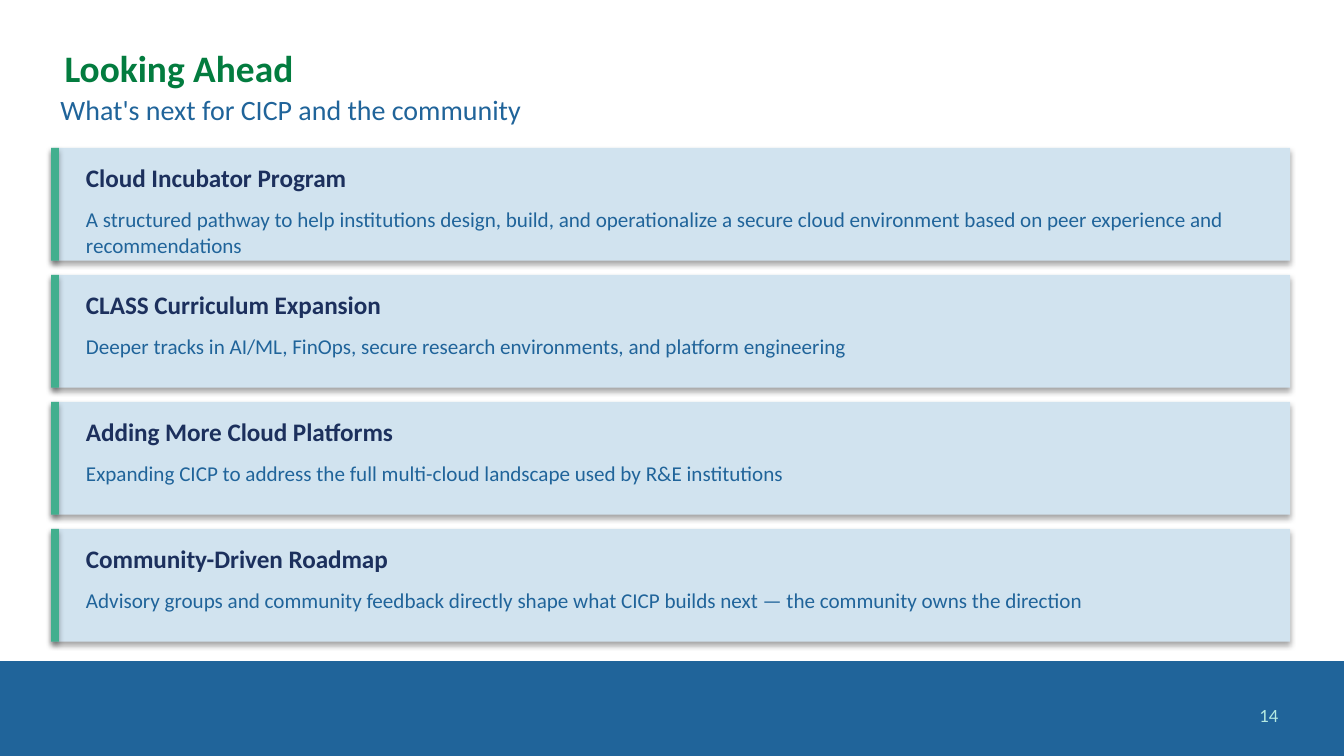
from pptx import Presentation
from pptx.dml.color import RGBColor
from pptx.enum.shapes import MSO_SHAPE
from pptx.enum.text import MSO_ANCHOR, MSO_AUTO_SIZE, PP_ALIGN
from pptx.oxml import parse_xml
from pptx.oxml.ns import nsdecls, qn
from pptx.util import Inches, Pt

RECT = MSO_SHAPE.RECTANGLE
TOP, MIDDLE = MSO_ANCHOR.TOP, MSO_ANCHOR.MIDDLE
LEFT, RIGHT = PP_ALIGN.LEFT, PP_ALIGN.RIGHT
FIXED = MSO_AUTO_SIZE.NONE

BLUE = RGBColor(0x20, 0x64, 0x9A)
GREEN = RGBColor(0x03, 0x7C, 0x3F)
MINT = RGBColor(0x42, 0xAF, 0x8E)
AQUA = RGBColor(0xB4, 0xE9, 0xE2)
PALE = RGBColor(0xD1, 0xE3, 0xEF)
NAVY = RGBColor(0x1C, 0x30, 0x5D)

SHADOW = (
    f'<a:outerShdw {nsdecls("a")} blurRad="{Pt(3.1)}" dist="{Pt(1.8)}" '
    'dir="5400000" algn="bl" rotWithShape="0">'
    '<a:srgbClr val="000000"><a:alpha val="35000"/></a:srgbClr></a:outerShdw>'
)

PLANS = [
    ("Cloud Incubator Program",
     "A structured pathway to help institutions design, build, and operationalize "
     "a secure cloud environment based on peer experience and recommendations"),
    ("CLASS Curriculum Expansion",
     "Deeper tracks in AI/ML, FinOps, secure research environments, "
     "and platform engineering"),
    ("Adding More Cloud Platforms",
     "Expanding CICP to address the full multi-cloud landscape "
     "used by R&E institutions"),
    ("Community-Driven Roadmap",
     "Advisory groups and community feedback directly shape what CICP builds next "
     "— the community owns the direction"),
]
WIDE = 10
TALL = WIDE * 9 / 16
EDGE, WIDTH = 0.38, 9.22
FIRST, HIGH = 1.1, 0.84
STEP = HIGH * 9 / 8


def write(frame, text, size=11.25, color=BLUE, bold=False, align=LEFT,
          anchor=TOP, inset=(0.07, 0.04), space=None):
    """Fill a text frame with one formatted paragraph."""
    frame.word_wrap = True
    frame.auto_size = FIXED
    frame.vertical_anchor = anchor
    frame.margin_left = frame.margin_right = Inches(inset[0])
    frame.margin_top = frame.margin_bottom = Inches(inset[1])
    para = frame.paragraphs[0]
    para.alignment = align
    para.line_spacing = space
    run = para.add_run()
    run.text = text
    font = run.font
    font.name, font.size, font.bold = "Calibri", Pt(size), bold
    font.color.rgb = color


class Deck:
    def __init__(self):
        self.show = Presentation()
        self.show.slide_width = Inches(WIDE)
        self.show.slide_height = Inches(TALL)
        self.slide = self.show.slides.add_slide(self.show.slide_layouts[5])

    def title(self, text, x, y, w, h, **style):
        box = self.slide.shapes.title
        box.left, box.top = Inches(x), Inches(y)
        box.width, box.height = Inches(w), Inches(h)
        write(box.text_frame, text, **style)

    def text(self, text, x, y, w, h, **style):
        box = self.slide.shapes.add_textbox(
            Inches(x), Inches(y), Inches(w), Inches(h))
        write(box.text_frame, text, **style)

    def rect(self, x, y, w, h, color, raised=False):
        box = self.slide.shapes.add_shape(
            RECT, Inches(x), Inches(y), Inches(w), Inches(h))
        box.fill.solid()
        box.fill.fore_color.rgb = color
        box.line.fill.background()
        box.shadow.inherit = False
        if raised:
            effects = box.element.spPr.find(qn("a:effectLst"))
            effects.append(parse_xml(SHADOW))

    def card(self, y, head, body, deep):
        self.rect(EDGE, y, WIDTH, HIGH, PALE, raised=True)
        self.rect(EDGE, y, 0.06, HIGH, MINT, raised=True)
        self.text(head, 0.57, y + 0.07, 9, 0.3, size=13.5, color=NAVY, bold=True)
        self.text(body, 0.57, y + 0.4, 9, deep)


def main():
    deck = Deck()
    deck.rect(0, 4.92, WIDE, TALL - 4.92, BLUE)
    deck.text("14", 7.36, 5.17, 2.25, 0.3, size=10, color=AQUA,
              align=RIGHT, anchor=MIDDLE, inset=(0.1, 0.05))
    deck.title("Looking Ahead", EDGE, 0.14, 9.23, 0.76, size=20, color=GREEN,
               bold=True, anchor=MIDDLE, inset=(0.1, 0.05), space=0.9)
    deck.text("What's next for CICP and the community",
              EDGE, 0.65, WIDTH, 0.33, size=15)
    for i, (head, body) in enumerate(PLANS):
        deep = 0.45 if len(body) > 120 else 0.27
        deck.card(FIRST + i * STEP, head, body, deep)
    deck.show.save("out.pptx")


if __name__ == "__main__":
    main()
